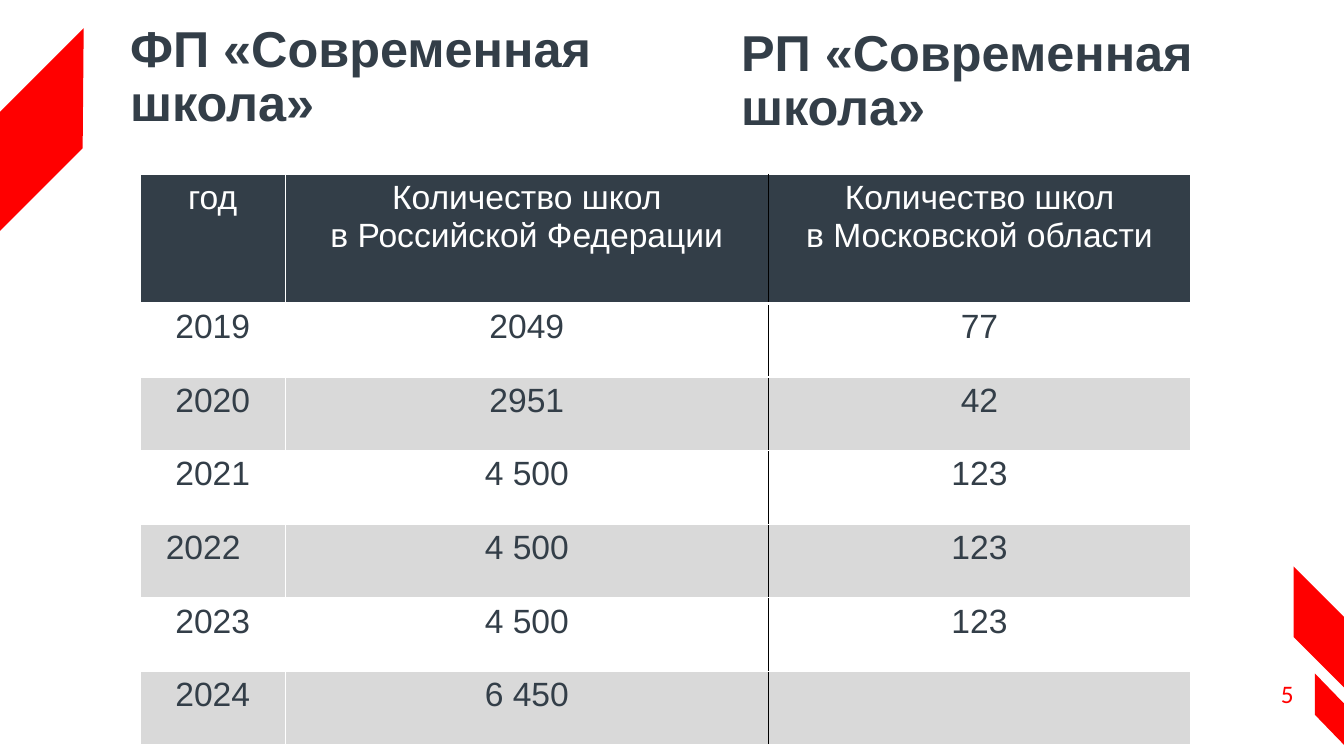
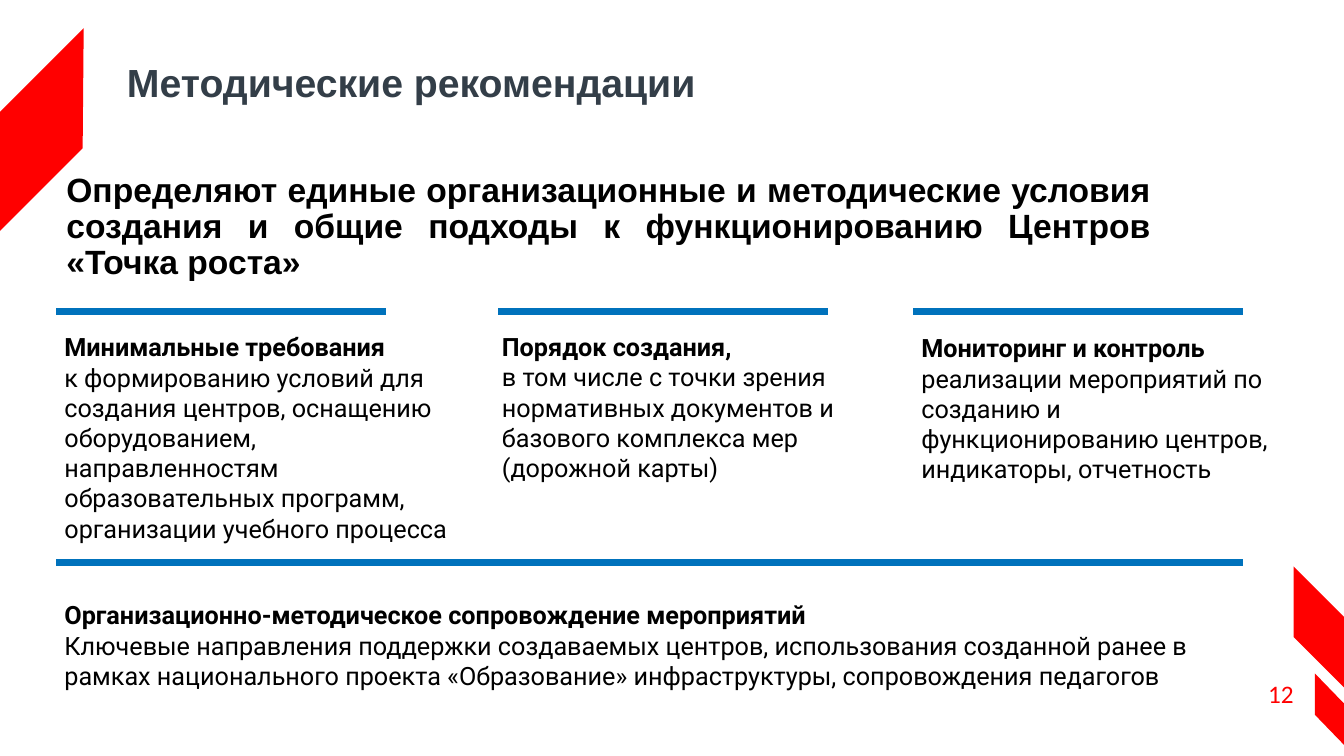
"""Build two slides on the modern school project and its guidelines."""
from lxml import etree
from pptx import Presentation
from pptx import util as u
from pptx.dml.color import RGBColor
from pptx.enum import shapes, text
from pptx.oxml import ns

PX = 9144
RED = RGBColor(0xFF, 0x00, 0x00)
SLATE = RGBColor(0x33, 0x3E, 0x48)
BLUE = RGBColor(0x00, 0x72, 0xBC)
GREY = RGBColor(0xD9, 0xD9, 0xD9)
WHITE = RGBColor(0xFF, 0xFF, 0xFF)
BLACK = RGBColor(0x00, 0x00, 0x00)
LEFT, MID, RIGHT = text.PP_ALIGN.LEFT, text.MSO_ANCHOR.MIDDLE, text.PP_ALIGN.RIGHT
BANDS = [
    [(-1, 230), (0, 111), (83, 28), (82, 147)],
    [(1333, 682), (1283, 632), (1283, 562), (1333, 612)],
    [(1333, 739), (1304, 709), (1304, 668), (1333, 698)],
]


def note(slide, area, head, size, face, color, bold=True, body="", side=5,
         anchor=text.MSO_ANCHOR.TOP, align=LEFT, gap=None):
    """Add a wrapped text box with a heading and an optional body."""
    box = slide.shapes.add_textbox(*[n * PX for n in area])
    frame = box.text_frame
    frame.word_wrap = True
    frame.vertical_anchor = anchor
    frame.margin_left = frame.margin_right = side * PX
    frame.margin_top = frame.margin_bottom = 5 * PX
    para = frame.paragraphs[0]
    para.alignment = align
    para.line_spacing = gap
    font = para.font
    font.name, font.size, font.color.rgb = face, u.Pt(size), color
    lead = para.add_run()
    lead.text = head
    if body:
        lead.font.bold = bold
        para.add_line_break()
        para.add_run().text = body
    else:
        font.bold = bold
    return box


def edge(cell, side, color, width):
    """Draw one border of a table cell."""
    line = etree.SubElement(cell._tc.get_or_add_tcPr(), ns.qn("a:" + side),
                            w=str(u.Pt(width)))
    fill = etree.SubElement(line, ns.qn("a:solidFill"))
    etree.SubElement(fill, ns.qn("a:srgbClr"), val=str(color))


deck = Presentation()
deck.slide_width, deck.slide_height = 1333 * PX, 750 * PX
pages = []
for number in ("5", "12"):
    page = deck.slides.add_slide(deck.slide_layouts[6])
    pages.append(page)
    note(page, (1238, 668, 50, 40), number, 18, "Calibri", RED, False, align=RIGHT)
    for start, *rest in BANDS:
        pen = page.shapes.build_freeform(*start, scale=PX)
        pen.add_line_segments(rest)
        band = pen.convert_to_shape()
        band.shadow.inherit = False
        band.fill.solid()
        band.fill.fore_color.rgb = RED
        band.line.fill.background()
schools, guide = pages

ROWS = [
    ("год", "Количество школ\nв Российской Федерации",
     "Количество школ\nв Московской области"),
    ("2019", "2049", "77"),
    ("2020", "2951", "42"),
    ("2021", "4 500", "123"),
    ("2022", "4 500", "123"),
    ("2023", "4 500", "123"),
    ("2024", "6 450", ""),
]
grid = schools.shapes.add_table(len(ROWS), 3, 139 * PX, 173 * PX,
                                1042 * PX, 566 * PX).table
grid.first_row = grid.horz_banding = False
for col, width in zip(grid.columns, (144, 479, 419)):
    col.width = width * PX
for r, row in enumerate(ROWS):
    grid.rows[r].height = (73 if r else 128) * PX
    for c, value in enumerate(row):
        cell = grid.cell(r, c)
        cell.margin_left = cell.margin_right = 5 * PX
        cell.margin_top = cell.margin_bottom = 5 * PX
        if value == "2022":
            cell.margin_right = 24 * PX
        edge(cell, "lnL", BLACK if c == 2 else WHITE, 1)
        edge(cell, "lnR", BLACK if c == 1 else WHITE, 1)
        edge(cell, "lnT", WHITE, 3 if r == 1 else 1)
        edge(cell, "lnB", WHITE, 1 if r else 3)
        cell.fill.solid()
        cell.fill.fore_color.rgb = (WHITE if r % 2 else GREY) if r else SLATE
        cell.text_frame.text = value
        for para in cell.text_frame.paragraphs:
            para.alignment = text.PP_ALIGN.CENTER
            para.font.name, para.font.size = "Arial", u.Pt(24)
            para.font.color.rgb = SLATE if r else WHITE

note(schools, (124, 18, 536, 119), "ФП «Современная школа»", 36, "Arial", SLATE,
     anchor=MID, gap=0.9)
plan = note(schools, (730, 22, 466, 119), "РП «Современная школа»", 36, "Arial",
            SLATE, anchor=MID, gap=0.9)
plan.fill.solid()
plan.fill.fore_color.rgb = WHITE

note(guide, (121, 40, 873, 88), "Методические рекомендации", 28, "Arial", SLATE,
     anchor=MID, gap=0.9)
note(guide, (56, 167, 1095, 175),
     "Определяют единые организационные и методические условия создания и общие "
     "подходы к функционированию Центров «Точка роста»",
     24, "Arial", BLACK, side=10, align=text.PP_ALIGN.JUSTIFY, gap=0.9)

TOPICS = [
    ((54, 324, 422, 175), "Минимальные требования",
     "к формированию условий для создания центров, оснащению оборудованием, "
     "направленностям образовательных программ, организации учебного процесса"),
    ((488, 324, 390, 153), "Порядок создания,",
     "в том числе с точки зрения нормативных документов и базового комплекса мер "
     "(дорожной карты)"),
    ((904, 325, 390, 199), "Мониторинг и контроль",
     "реализации мероприятий по созданию и функционированию центров, индикаторы, "
     "отчетность"),
    ((54, 590, 1179, 78), "Организационно-методическое сопровождение мероприятий",
     "Ключевые направления поддержки создаваемых центров, использования созданной "
     "ранее в рамках национального проекта «Образование» инфраструктуры, "
     "сопровождения педагогов"),
]
for area, head, body in TOPICS:
    note(guide, area, head, 18, "Roboto", BLACK, body=body, side=10)

for x, y, width in ((56, 309, 327), (494, 309, 327), (906, 309, 327), (56, 558, 1177)):
    rule = guide.shapes.add_connector(shapes.MSO_CONNECTOR.STRAIGHT, x * PX, y * PX,
                                      (x + width) * PX, y * PX)
    rule.line.color.rgb = BLUE
    rule.line.width = u.Pt(4.5)
    etree.SubElement(rule._element.spPr, ns.qn("a:effectLst"))

deck.save("out.pptx")
